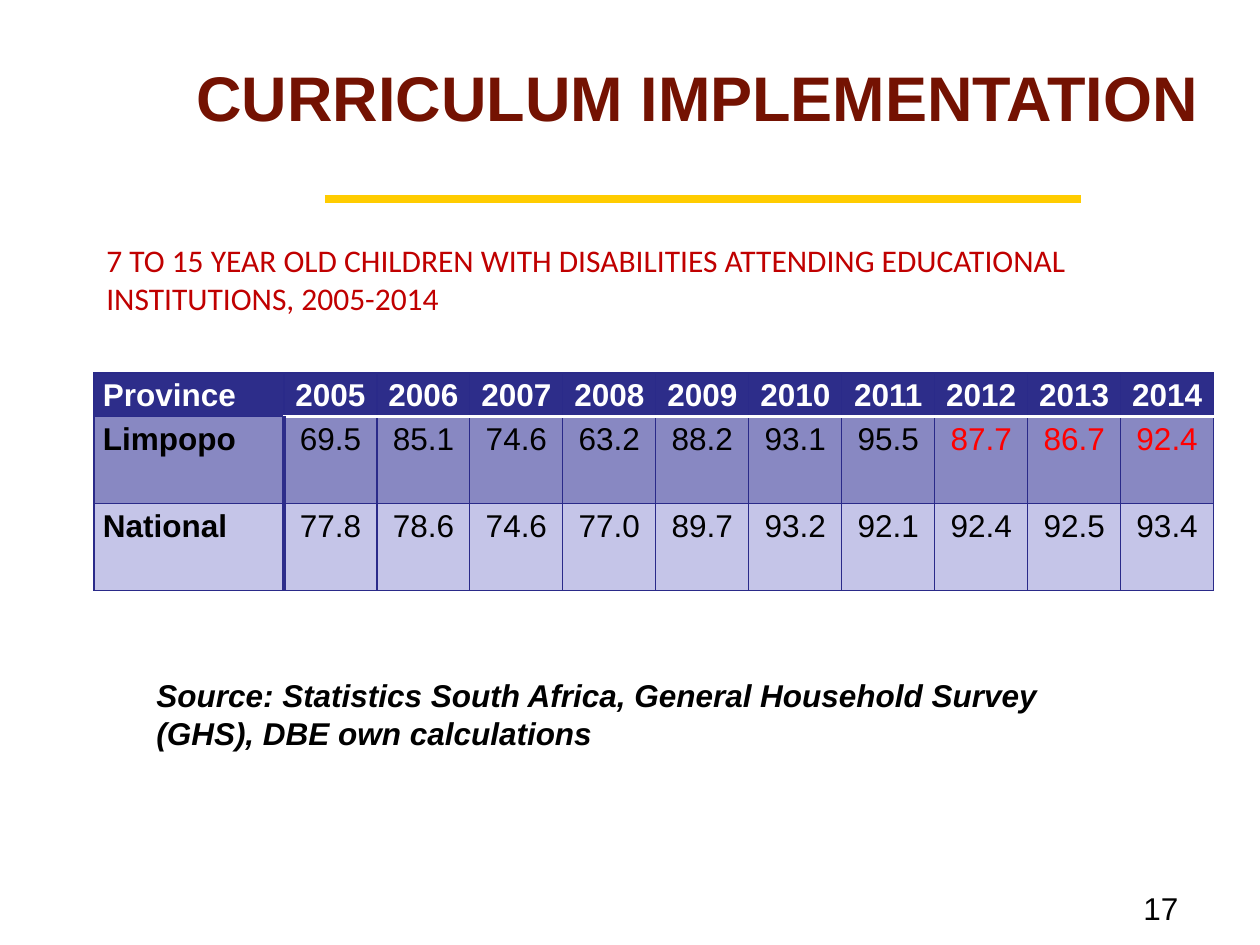
"""Build the curriculum implementation slide with its attendance table."""
from lxml import etree
from pptx import Presentation
from pptx import util as u
from pptx.dml.color import RGBColor
from pptx.enum import shapes, text
from pptx.oxml.ns import qn

PX = u.Inches(1) // 126
COLORS = {
    "title": "741202", "rule": "FFCC00", "subtitle": "C00000", "black": "000000",
    "white": "FFFFFF", "header": "2D2D8A", "border": "2A2A89",
    "limpopo": "8888C2", "national": "C5C5E8", "recent": "FF0000",
}
ROWS = [
    ["Province", *(str(year) for year in range(2005, 2015))],
    ["Limpopo", "69.5", "85.1", "74.6", "63.2", "88.2", "93.1", "95.5", "87.7", "86.7", "92.4"],
    ["National", "77.8", "78.6", "74.6", "77.0", "89.7", "93.2", "92.1", "92.4", "92.5", "93.4"],
]
FILLS = ["header", "limpopo", "national"]
FIRST_WIDTH, YEAR_WIDTH = 190, 93
HEIGHTS = [39, 87, 87]


def px(*values):
    return [value * PX for value in values]


def rgb(name):
    return RGBColor.from_string(COLORS[name])


def write(frame, words, *, size=18, font="Arial", color="black", bold=False,
          italic=False, align=text.PP_ALIGN.LEFT, spacing=None):
    para = frame.paragraphs[0]
    para.alignment = align
    para.line_spacing = spacing
    span = para.add_run()
    span.text = words
    span.font.size = u.Pt(size)
    span.font.name = font
    span.font.color.rgb = rgb(color)
    span.font.bold = bold
    span.font.italic = italic


def add_text(page, place, words, *, anchor=text.MSO_ANCHOR.TOP, top=6, **style):
    box = page.shapes.add_textbox(*px(*place))
    frame = box.text_frame
    frame.word_wrap = True
    frame.vertical_anchor = anchor
    frame.margin_top = top * PX
    write(frame, words, **style)


def add_rule(page, left, right, y):
    rule = page.shapes.add_connector(shapes.MSO_CONNECTOR.STRAIGHT, *px(left, y, right, y))
    rule.line.color.rgb = rgb("rule")
    rule.line.width = u.Pt(4.5)
    etree.SubElement(rule.element.spPr, qn("a:effectLst"))


def set_borders(cell, **overrides):
    properties = cell._tc.get_or_add_tcPr()
    for index, side in enumerate("LRTB"):
        color, width = overrides.get(side, ("border", 0.75))
        line = etree.Element(qn(f"a:ln{side}"), w=str(u.Pt(width)))
        fill = etree.SubElement(line, qn("a:solidFill"))
        etree.SubElement(fill, qn("a:srgbClr"), val=COLORS[color])
        properties.insert(index, line)


def borders_at(row, column):
    sides = {}
    if row == 0 and column > 0:
        sides["B"] = ("white", 2)
    if row == 1 and column > 0:
        sides["T"] = ("white", 2)
    if row > 0 and column < 2:
        sides["R" if column == 0 else "L"] = ("header", 2)
    return sides


def text_color(row, column):
    if row == 0:
        return "white"
    return "recent" if row == 1 and column >= 8 else "black"


def add_attendance(page, left, top):
    widths = [FIRST_WIDTH] + [YEAR_WIDTH] * 10
    place = px(left, top, sum(widths), sum(HEIGHTS))
    table = page.shapes.add_table(len(ROWS), len(widths), *place).table
    for column, width in zip(table.columns, widths):
        column.width = width * PX
    for row, height in zip(table.rows, HEIGHTS):
        row.height = height * PX
    for r, values in enumerate(ROWS):
        for c, value in enumerate(values):
            cell = table.cell(r, c)
            cell.margin_left = cell.margin_right = 9 * PX
            cell.margin_top = cell.margin_bottom = 0
            cell.fill.solid()
            cell.fill.fore_color.rgb = rgb(FILLS[r])
            set_borders(cell, **borders_at(r, c))
            write(cell.text_frame, value, color=text_color(r, c),
                  bold=r == 0 or c == 0, spacing=1.15,
                  align=text.PP_ALIGN.CENTER if c else text.PP_ALIGN.LEFT)


def main():
    deck = Presentation()
    deck.slide_width, deck.slide_height = px(1260, 945)
    page = deck.slides.add_slide(deck.slide_layouts[6])
    add_rule(page, 325, 1081, 199)
    add_text(page, (94, 224, 1062, 110),
             "7 TO 15 YEAR OLD CHILDREN WITH DISABILITIES ATTENDING EDUCATIONAL "
             "INSTITUTIONS, 2005-2014",
             font="Calibri", color="subtitle", anchor=text.MSO_ANCHOR.MIDDLE)
    add_text(page, (144, 670, 963, 89),
             "Source: Statistics South Africa, General Household Survey (GHS), "
             "DBE own calculations", bold=True, italic=True)
    add_attendance(page, 94, 373)
    add_text(page, (1131, 883, 68, 50), "17")
    add_text(page, (184, 45, 1052, 89), "CURRICULUM IMPLEMENTATION",
             size=36, color="title", bold=True, top=14)
    deck.save("out.pptx")


if __name__ == "__main__":
    main()
